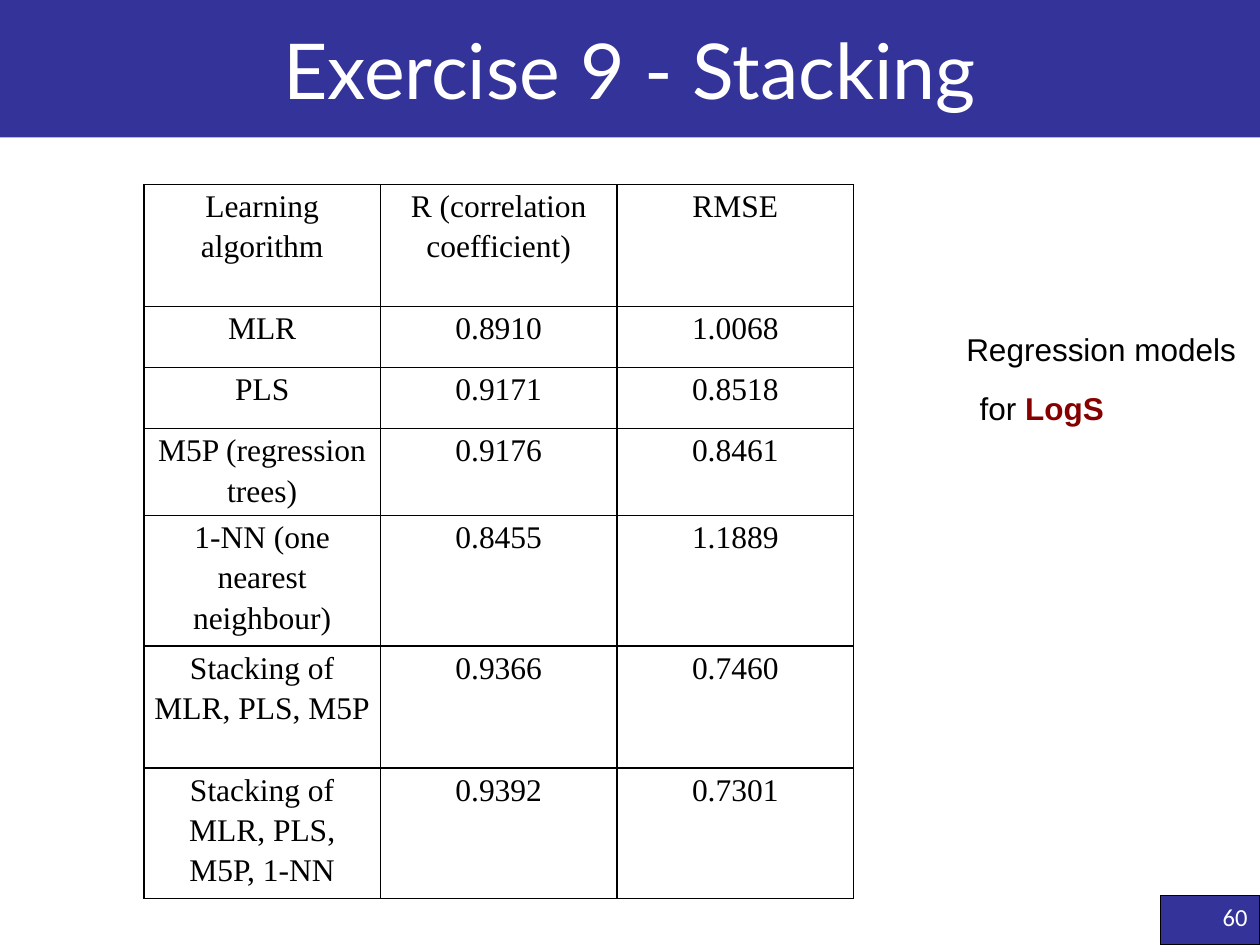
"""Build the slide comparing stacked regression models for LogS."""
from lxml import etree
from pptx import Presentation
from pptx.dml.color import RGBColor
from pptx.enum import shapes, text
from pptx.oxml import ns
from pptx.util import Cm, Pt

INDIGO = RGBColor(0x33, 0x33, 0x99)
WHITE = RGBColor(0xFF, 0xFF, 0xFF)
BLACK = RGBColor(0, 0, 0)
MAROON = RGBColor(0x86, 0, 0)

TITLE = "Exercise 9 - Stacking"
PAGE_NUMBER = "60"
RESULTS = [
    ("Learning algorithm", "R (correlation coefficient)", "RMSE"),
    ("MLR", "0.8910", "1.0068"),
    ("PLS", "0.9171", "0.8518"),
    ("M5P (regression trees)", "0.9176", "0.8461"),
    ("1-NN (one nearest neighbour)", "0.8455", "1.1889"),
    ("Stacking of MLR, PLS, M5P", "0.9366", "0.7460"),
    ("Stacking of MLR, PLS, M5P, 1-NN", "0.9392", "0.7301"),
]
SHORT_ROW, TALL_ROW = 1.23, 2.46
TALL_ROWS = (0, 5, 6)
COLUMN_WIDTH = 4.77
CAPTIONS = [
    (19.23, 6.53, 6.17, [("Regression models", BLACK, False)]),
    (19.5, 7.72, 3.05, [("for ", BLACK, False), ("LogS", MAROON, True)]),
]


def add_run(paragraph, words, font_name, size, color, bold=False):
    run = paragraph.add_run()
    run.text = words
    run.font.name = font_name
    run.font.size = Pt(size)
    run.font.color.rgb = color
    run.font.bold = bold


def fill_solid(shape, color):
    shape.fill.solid()
    shape.fill.fore_color.rgb = color


def add_title(slide):
    title = slide.shapes.title
    title.left, title.top, title.width, title.height = Cm(0), Cm(0), Cm(25.4), Cm(2.77)
    fill_solid(title, INDIGO)
    frame = title.text_frame
    frame.vertical_anchor = text.MSO_ANCHOR.MIDDLE
    paragraph = frame.paragraphs[0]
    paragraph.alignment = text.PP_ALIGN.CENTER
    add_run(paragraph, TITLE, "Lato", 44, WHITE)


def add_page_number(slide):
    box = slide.shapes.add_shape(
        shapes.MSO_SHAPE.RECTANGLE, Cm(23.4), Cm(18.05), Cm(2), Cm(1))
    box.shadow.inherit = False
    fill_solid(box, INDIGO)
    box.line.color.rgb = BLACK
    box.line.width = Pt(0.75)
    frame = box.text_frame
    frame.vertical_anchor = text.MSO_ANCHOR.TOP
    paragraph = frame.paragraphs[0]
    paragraph.alignment = text.PP_ALIGN.RIGHT
    add_run(paragraph, PAGE_NUMBER, "Calibri", 14, WHITE)


def add_caption(slide, left, top, width, runs):
    box = slide.shapes.add_textbox(Cm(left), Cm(top), Cm(width), Cm(1.02))
    frame = box.text_frame
    frame.word_wrap = False
    frame.auto_size = text.MSO_AUTO_SIZE.SHAPE_TO_FIT_TEXT
    for words, color, bold in runs:
        add_run(frame.paragraphs[0], words, "Arial", 18, color, bold)


def set_borders(cell):
    properties = cell._tc.get_or_add_tcPr()
    for position, side in enumerate(("lnL", "lnR", "lnT", "lnB")):
        line = etree.Element(ns.qn(f"a:{side}"), w=str(Pt(1)))
        fill = etree.SubElement(line, ns.qn("a:solidFill"))
        etree.SubElement(fill, ns.qn("a:srgbClr"), val=str(BLACK))
        properties.insert(position, line)


def format_cell(cell, words):
    cell.fill.background()
    cell.margin_left = cell.margin_right = Cm(0.18)
    cell.margin_top = cell.margin_bottom = Cm(0)
    paragraph = cell.text_frame.paragraphs[0]
    paragraph.alignment = text.PP_ALIGN.CENTER
    paragraph.line_spacing = 1.15
    paragraph.space_after = Pt(10)
    add_run(paragraph, words, "Times New Roman", 18, BLACK)
    set_borders(cell)


def add_results(slide):
    heights = [TALL_ROW if i in TALL_ROWS else SHORT_ROW for i in range(len(RESULTS))]
    columns = len(RESULTS[0])
    table = slide.shapes.add_table(
        len(RESULTS), columns, Cm(2.9), Cm(3.72),
        Cm(COLUMN_WIDTH * columns), Cm(sum(heights))).table
    table.first_row = table.horz_banding = False
    for column in table.columns:
        column.width = Cm(COLUMN_WIDTH)
    for row, height, values in zip(table.rows, heights, RESULTS):
        row.height = Cm(height)
        for cell, words in zip(row.cells, values):
            format_cell(cell, words)


def main():
    presentation = Presentation()
    presentation.slide_width, presentation.slide_height = Cm(25.4), Cm(19.05)
    slide = presentation.slides.add_slide(presentation.slide_layouts[5])
    add_title(slide)
    add_page_number(slide)
    for caption in CAPTIONS:
        add_caption(slide, *caption)
    add_results(slide)
    presentation.save("out.pptx")


if __name__ == "__main__":
    main()
